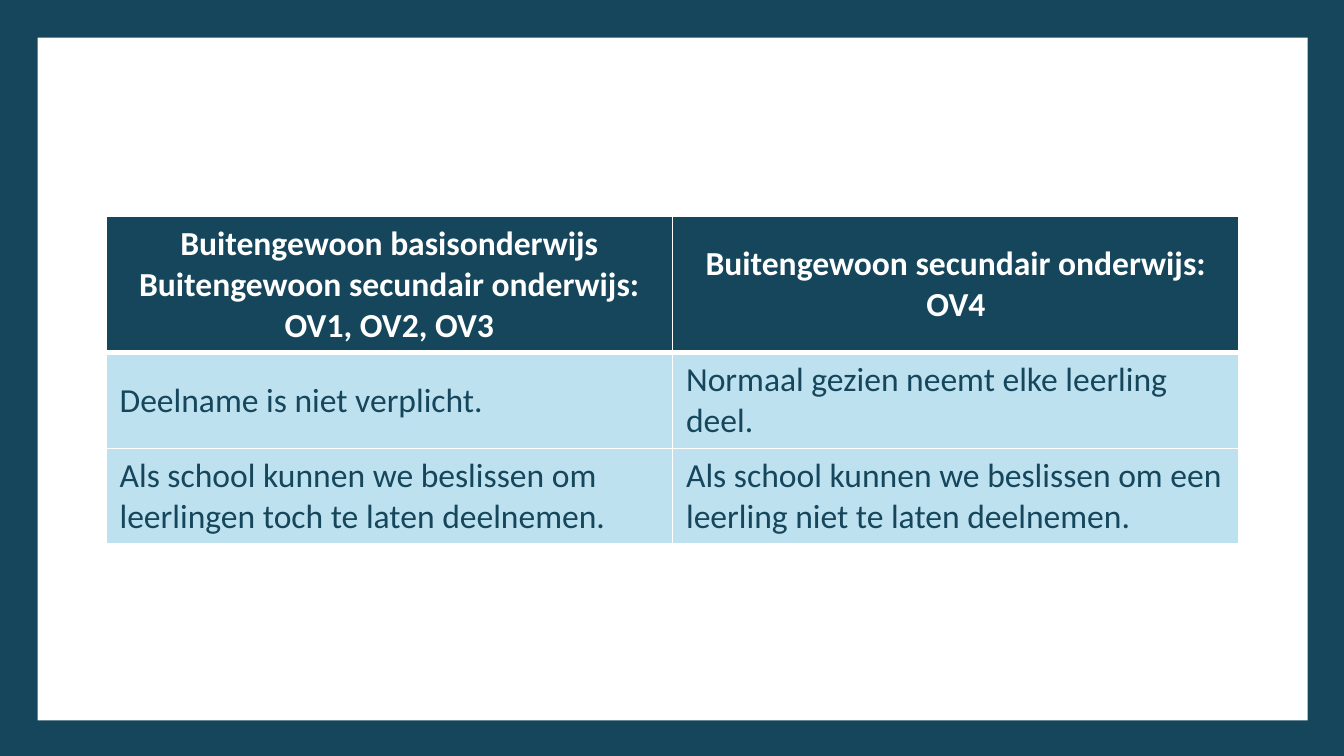
"""Build a slide with a table on taking part in special education tests."""
from lxml import etree
from pptx import Presentation
from pptx import util as u
from pptx.dml.color import RGBColor
from pptx.enum import shapes, text
from pptx.oxml.ns import qn

NAVY = RGBColor(0x15, 0x46, 0x5B)
SKY = RGBColor(0xBE, 0xE1, 0xF0)
WHITE = RGBColor(0xFF, 0xFF, 0xFF)

ROWS = [
    [["Buitengewoon basisonderwijs",
      "Buitengewoon secundair onderwijs: OV1, OV2, OV3"],
     ["Buitengewoon secundair onderwijs: OV4"]],
    [["Deelname is niet verplicht."],
     ["Normaal gezien neemt elke leerling deel."]],
    [["Als school kunnen we beslissen om leerlingen toch te laten deelnemen."],
     ["Als school kunnen we beslissen om een leerling niet te laten deelnemen."]],
]
HEIGHTS = [1, 0.7, 0.7]


def add_borders(cell, widths):
    properties = cell._tc.get_or_add_tcPr()
    for index, (side, width) in enumerate(widths.items()):
        line = etree.Element(qn(f"a:ln{side}"), w=str(u.Pt(width)))
        fill = etree.SubElement(line, qn("a:solidFill"))
        etree.SubElement(fill, qn("a:srgbClr"), val=str(WHITE))
        properties.insert(index, line)


deck = Presentation()
deck.slide_width = u.Inches(10)
deck.slide_height = u.Inches(10 * 9 / 16)
page = deck.slides.add_slide(deck.slide_layouts[6])
page.background.fill.solid()
page.background.fill.fore_color.rgb = NAVY

panel = page.shapes.add_shape(
    shapes.MSO_SHAPE.RECTANGLE,
    u.Inches(0.28), u.Inches(0.28), u.Inches(9.45), u.Inches(5.08))
panel.shadow.inherit = False
panel.fill.solid()
panel.fill.fore_color.rgb = WHITE
panel.line.fill.background()

table = page.shapes.add_table(
    len(ROWS), 2, u.Inches(0.79), u.Inches(1.61),
    u.Inches(8.43), u.Inches(sum(HEIGHTS))).table

for row_index, (row, height) in enumerate(zip(ROWS, HEIGHTS)):
    table.rows[row_index].height = u.Inches(height)
    header = row_index == 0
    for column_index, lines in enumerate(row):
        cell = table.cell(row_index, column_index)
        cell.vertical_anchor = text.MSO_ANCHOR.MIDDLE
        cell.fill.solid()
        cell.fill.fore_color.rgb = NAVY if header else SKY
        top = 3 if row_index == 1 else 1
        add_borders(cell, {"L": 1, "R": 1, "T": top, "B": 3 if header else 1})
        frame = cell.text_frame
        for line_index, line in enumerate(lines):
            para = frame.add_paragraph() if line_index else frame.paragraphs[0]
            para.alignment = text.PP_ALIGN.CENTER if header else text.PP_ALIGN.LEFT
            span = para.add_run()
            span.text = line
            span.font.name = "Calibri"
            span.font.size = u.Pt(18)
            span.font.bold = header
            span.font.color.rgb = WHITE if header else NAVY

deck.save("out.pptx")
